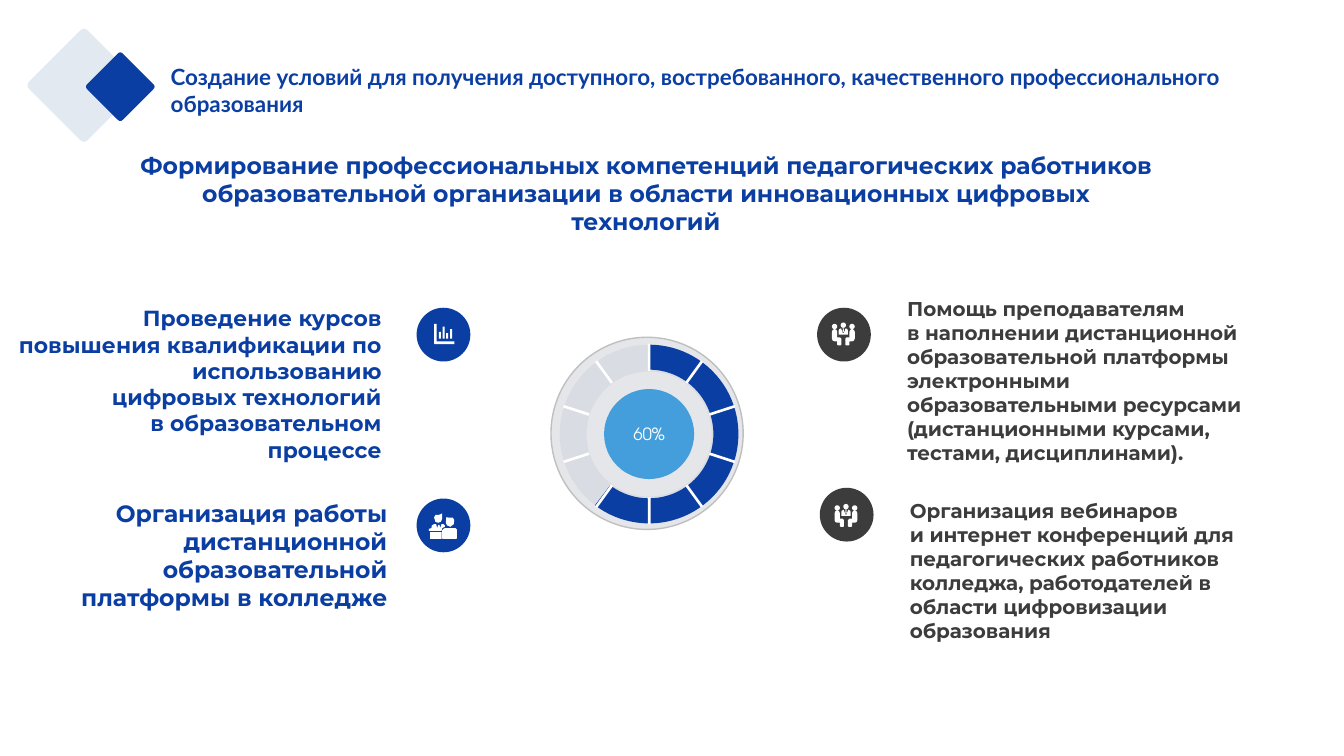
import math

import lxml.etree
import pptx
import pptx.dml.color
import pptx.enum.shapes
import pptx.enum.text
import pptx.oxml.ns
import pptx.util

Inches = pptx.util.Inches
Preset = pptx.enum.shapes.MSO_SHAPE
Align = pptx.enum.text.PP_ALIGN
Anchor = pptx.enum.text.MSO_ANCHOR
FIXED = pptx.enum.text.MSO_AUTO_SIZE.NONE

COLORS = {
    "blue": "0B3EA2", "sky": "1D8DD8", "dark": "3C3C3C", "white": "FFFFFF",
    "disc": "E4E6EA", "rim": "BFBFBF", "track": "C9CED5", "pale": "E2E9F1",
}

HEADER = ("Создание условий для получения доступного, востребованного, "
          "качественного профессионального образования")

# (left, top, width, height), size, colour, alignment, lines
TEXTS = [
    ((0.6, 1.12, 8.41, 0.64), 12.6, "blue", Align.CENTER, [
        "Формирование профессиональных компетенций педагогических работников",
        "образовательной организации в области инновационных цифровых",
        "технологий"]),
    ((0.28, 2.27, 2.72, 1.02), 11.7, "blue", Align.RIGHT, [
        "Проведение курсов", "повышения квалификации по", "использованию",
        "цифровых технологий", "в образовательном", "процессе"]),
    ((0.69, 3.71, 2.35, 0.77), 12.6, "blue", Align.RIGHT, [
        "Организация работы", "дистанционной", "образовательной",
        "платформы в колледже"]),
    ((6.59, 2.21, 3.13, 1.09), 10.7, "dark", Align.LEFT, [
        "Помощь преподавателям", "в наполнении дистанционной",
        "образовательной платформы", "электронными",
        "образовательными ресурсами", "(дистанционными курсами,",
        "тестами, дисциплинами)."]),
    ((6.61, 3.71, 2.44, 0.9), 10.7, "dark", Align.LEFT, [
        "Организация вебинаров", "и интернет конференций для",
        "педагогических работников", "колледжа, работодателей в",
        "области цифровизации", "образования"]),
]


def circle(x, y, radius, steps=16):
    turns = [2 * math.pi * i / steps for i in range(steps)]
    return [(x + radius * math.cos(t), y + radius * math.sin(t)) for t in turns]


def box(left, top, right, bottom):
    return [(left, top), (right, top), (right, bottom), (left, bottom)]


def rounded_diamond(half, cut, steps=6):
    """Diamond whose corners are quadratic curves starting `cut` from each tip."""
    tips = [(half, 0), (2 * half, half), (half, 2 * half), (0, half)]
    outline = []
    for i, tip in enumerate(tips):
        before, after = tips[i - 1], tips[(i + 1) % 4]
        start, end = ([t + (n - t) * cut / half for t, n in zip(tip, near)]
                      for near in (before, after))
        for t in (k / steps for k in range(steps + 1)):
            outline.append(tuple((1 - t) ** 2 * a + 2 * t * (1 - t) * b + t * t * c
                                 for a, b, c in zip(start, tip, end)))
    return outline


# Icon outlines, in hundredths of an inch from the icon's corner
SEATED = [(15, 5), (16.4, 5.5), (17, 7), (17, 12), (16.4, 13.5), (15, 14), (13, 14),
          (13, 16.5), (12.5, 17), (10.5, 17), (10, 16.5), (10, 12), (11, 11),
          (13, 11), (13, 7), (13.6, 5.5)]
MEETING = [
    SEATED, [(17 - x, y) for x, y in SEATED],
    [(8, 4.3), (9, 4.3), (8.8, 5.3), (9, 6.5), (8.5, 7.2), (8, 6.5), (8.2, 5.3)],
    [(6.8, 4.3), (8.2, 8), (8.8, 8), (10.2, 4.3), (11.5, 5), (12, 6), (12, 9),
     (5, 9), (5, 6), (5.5, 5)],
    circle(2, 3, 2), circle(15, 3, 2), circle(8.5, 2, 2),
]
BARS = [
    [(0, 0), (2, 0), (2, 13), (15, 13), (15, 15), (0.5, 15), (0, 14.5)],
    box(3.5, 6, 5, 11), box(6.3, 2, 7.8, 11), box(9, 7, 10.5, 11), box(12, 4, 13.5, 11),
]
DESK = [
    box(1, 14, 9.5, 19),
    [(12, 11), (20, 11), (21, 12), (21, 18.5), (20.5, 19), (10.5, 19), (10, 18.5),
     (10, 12.5), (11, 11.5)],
    [(4, 8), (5.5, 8), (6.3, 11), (7, 8.5), (8, 8.5), (8.5, 11), (9.5, 8), (11, 8),
     (12, 9), (12, 10), (10, 11), (9.5, 13), (0, 13), (0, 11.5), (2, 11), (2.3, 9)],
    [(13, 3), (18, 3.2), (19, 5), (18.6, 8), (16, 10), (13.5, 8.8), (12.8, 7)],
    [(4, 3), (5, 1.2), (8, 1), (10, 0), (10, 4), (9, 6.3), (7, 7), (5, 6.3)],
]

# badge corner, badge colour, icon corner, icon outlines
BADGES = [
    ((3.1, 2.29), "blue", (3.23, 2.41), BARS),
    ((3.1, 3.71), "blue", (3.19, 3.82), DESK),
    ((6.08, 2.29), "dark", (6.19, 2.4), MEETING),
    ((6.1, 3.63), "dark", (6.21, 3.75), MEETING),
]
DIAMONDS = [((0.19, 0.2), 43.5, 3, "pale"), ((0.63, 0.38), 26.5, 2, "blue")]

GAUGE_X, GAUGE_Y = 4.83, 3.23
SEGMENTS = 10

deck = pptx.Presentation()
deck.slide_width = Inches(10)
deck.slide_height = deck.slide_width * 9 // 16
slide = deck.slides.add_slide(deck.slide_layouts[5])


def rgb(name):
    return pptx.dml.color.RGBColor.from_string(COLORS[name])


def paint(shape, color, opacity=None):
    shape.shadow.inherit = False
    shape.fill.solid()
    shape.fill.fore_color.rgb = rgb(color)
    shape.line.fill.background()
    if opacity:
        tint = shape.fill._xPr.find(pptx.oxml.ns.qn("a:solidFill"))[0]
        alpha = lxml.etree.SubElement(tint, pptx.oxml.ns.qn("a:alpha"))
        alpha.set("val", str(opacity * 1000))
    return shape


def add_preset(preset, place, color, opacity=None):
    shape = slide.shapes.add_shape(preset, *map(Inches, place))
    return paint(shape, color, opacity)


def add_centered(preset, size, color, opacity=None):
    place = (GAUGE_X - size / 2, GAUGE_Y - size / 2, size, size)
    return add_preset(preset, place, color, opacity)


def add_outlines(corner, outlines, color):
    """One freeform from outlines given in hundredths of an inch."""
    points = [[(x * 10, y * 10) for x, y in outline] for outline in outlines]
    builder = slide.shapes.build_freeform(*points[0][0], scale=Inches(1) / 1000)
    for i, outline in enumerate(points):
        if i:
            builder.move_to(*outline[0])
        builder.add_line_segments(outline[1:], close=True)
    paint(builder.convert_to_shape(*map(Inches, corner)), color)


def write(shape, lines, font, color, align, frame):
    for name, value in frame.items():
        setattr(shape.text_frame, name, value)
    for i, line in enumerate(lines):
        text_frame = shape.text_frame
        paragraph = text_frame.add_paragraph() if i else text_frame.paragraphs[0]
        paragraph.alignment = align
        run = paragraph.add_run()
        run.text = line
        for name, value in font.items():
            setattr(run.font, name, value)
        run.font.color.rgb = rgb(color)


# Progress gauge
disc = add_preset(Preset.OVAL, (4.1, 2.51, 1.43, 1.43), "disc")
disc.line.color.rgb = rgb("rim")
disc.line.width = pptx.util.Pt(0.75)
add_centered(Preset.OVAL, 0.67, "sky", 80)
add_centered(Preset.DONUT, 1.33, "track", 38).adjustments[0] = 0.15
progress = add_centered(Preset.BLOCK_ARC, 1.33, "blue")
for i, value in enumerate((162, 76.32, 0.14)):
    progress.adjustments[i] = value
for i in range(SEGMENTS):
    angle = 360 / SEGMENTS * i
    x = GAUGE_X + 0.57 * math.sin(math.radians(angle))
    y = GAUGE_Y - 0.57 * math.cos(math.radians(angle))
    add_preset(Preset.RECTANGLE, (x - 0.01, y - 0.1, 0.02, 0.2), "white").rotation = angle
share = slide.shapes.add_textbox(*map(Inches, (4.59, 3.05, 0.48, 0.36)))
write(share, ["60%"], {"name": "TeX Gyre Adventor", "size": pptx.util.Pt(9)}, "white",
      Align.CENTER, {"word_wrap": True, "auto_size": FIXED,
                     "vertical_anchor": Anchor.MIDDLE})

for corner, color, icon_corner, outlines in BADGES:
    add_preset(Preset.OVAL, (*corner, 0.4, 0.4), color)
    add_outlines(icon_corner, outlines, "white")
for corner, half, cut, color in DIAMONDS:
    add_outlines(corner, [rounded_diamond(half, cut)], color)

header = slide.shapes.title
for name, value in zip(("left", "top", "width", "height"), (1.27, 0.46, 8.22, 0.42)):
    setattr(header, name, Inches(value))
write(header, [HEADER], {"name": "Lato", "size": pptx.util.Pt(12), "bold": True}, "blue",
      Align.LEFT, {"word_wrap": True, "auto_size": FIXED, "margin_left": 0,
                   "margin_right": 0, "vertical_anchor": Anchor.MIDDLE})

for place, size, color, align, lines in TEXTS:
    block = slide.shapes.add_textbox(*map(Inches, place))
    write(block, lines, {"name": "Montserrat", "size": pptx.util.Pt(size), "bold": True},
          color, align, {"word_wrap": False, "auto_size": FIXED,
                         "margin_left": Inches(0.16), "margin_right": Inches(0.16),
                         "margin_top": 0, "margin_bottom": 0})

deck.save("out.pptx")
